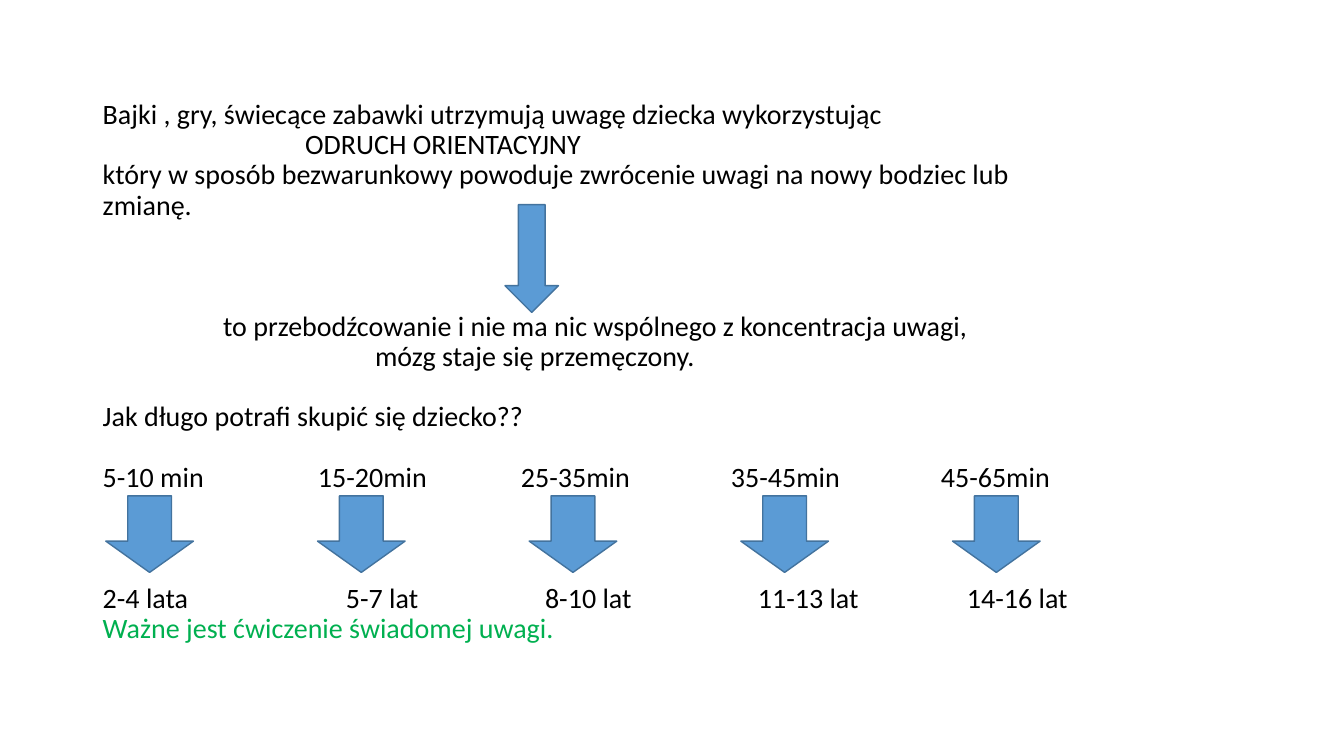
from dataclasses import dataclass
from pptx import Presentation
from pptx.dml.color import RGBColor
from pptx.enum.shapes import MSO_SHAPE as Shape
from pptx.enum.text import MSO_ANCHOR as Anchor
from pptx.util import Pt


@dataclass(frozen=True)
class Theme:
    font: str = "Calibri"
    size: float = 20
    spacing: float = 0.9
    line_step: float = 21.6
    ink: str = "000000"
    accent: str = "00B050"
    arrow_fill: str = "5B9BD5"
    arrow_line: str = "43739E"


@dataclass(frozen=True)
class Box:
    left: float
    top: float
    width: float
    height: float

    def rows(self, first, count=1):
        step = THEME.line_step
        return Box(self.left, self.top + first * step, self.width, count * step)


THEME = Theme()
BODY = Box(73.4, 71.6, 813.6, 388.8)

INTRO = [
    ("Bajki , gry, świecące zabawki utrzymują uwagę dziecka wykorzystując", 0),
    ("ODRUCH ORIENTACYJNY", 144.6),
    ("który w sposób bezwarunkowy powoduje zwrócenie uwagi na nowy bodziec lub", 0),
    ("zmianę.", 0),
]
CONCLUSION = [
    ("to przebodźcowanie i nie ma nic wspólnego z koncentracja uwagi,", 86),
    ("mózg staje się przemęczony.", 194.5),
]
FOCUS_TIMES = [
    ("5-10 min", 0, "2-4 lata", 0),
    ("15-20min", 2.5, "5-7 lat", 22.5),
    ("25-35min", -3.7, "8-10 lat", 13.5),
    ("35-45min", -4.9, "11-13 lat", 14.4),
    ("45-65min", -6.1, "14-16 lat", 12.5),
]


def add_text(page, box, lines, color=THEME.ink, size=THEME.size, font=THEME.font):
    frame = page.shapes.add_textbox(
        Pt(box.left), Pt(box.top), Pt(box.width), Pt(box.height)
    ).text_frame
    frame.word_wrap = True
    frame.vertical_anchor = Anchor.TOP
    frame.margin_left = frame.margin_right = 0
    frame.margin_top = frame.margin_bottom = 0
    for index, (text, indent) in enumerate(lines):
        para = frame.add_paragraph() if index else frame.paragraphs[0]
        para.line_spacing = THEME.spacing
        para._p.get_or_add_pPr().set("marL", str(Pt(indent)))
        span = para.add_run()
        span.text = text
        span.font.name = font
        span.font.size = Pt(size)
        span.font.color.rgb = RGBColor.from_string(color)


def add_arrow(page, box, head=0.5):
    arrow = page.shapes.add_shape(
        Shape.DOWN_ARROW, Pt(box.left), Pt(box.top), Pt(box.width), Pt(box.height)
    )
    arrow.adjustments[0] = 0.5
    arrow.adjustments[1] = head
    arrow.shadow.inherit = False
    arrow.fill.solid()
    arrow.fill.fore_color.rgb = RGBColor.from_string(THEME.arrow_fill)
    arrow.line.color.rgb = RGBColor.from_string(THEME.arrow_line)
    arrow.line.width = Pt(1)


def add_reflex(page, box):
    add_text(page, box.rows(0, 4), INTRO)
    add_arrow(page, Box(box.left + 287.3, box.top + 74.6, 38.2, 77))
    add_text(page, box.rows(7, 2), CONCLUSION)


def add_focus_times(page, box):
    pitch = 151.2
    add_text(page, box.rows(0), [("Jak długo potrafi skupić się dziecko??", 0)])
    for index, (minutes, minutes_shift, age, age_shift) in enumerate(FOCUS_TIMES):
        left = box.left + index * pitch
        times = Box(left + minutes_shift, box.top, 110, box.height)
        ages = Box(left + age_shift, box.top, 110, box.height)
        add_text(page, times.rows(2), [(minutes, 0)])
        add_arrow(page, Box(left + 2.2, box.top + 66.6, 62.6, 54.7), head=0.408)
        add_text(page, ages.rows(6), [(age, 0)])
    add_text(
        page,
        box.rows(7),
        [("Ważne jest ćwiczenie świadomej uwagi.", 0)],
        color=THEME.accent,
    )


def main():
    deck = Presentation()
    deck.slide_width, deck.slide_height = Pt(960), Pt(540)
    page = deck.slides.add_slide(deck.slide_layouts[6])
    add_reflex(page, BODY.rows(0, 9))
    add_focus_times(page, BODY.rows(10, 8))
    deck.save("out.pptx")


if __name__ == "__main__":
    main()
